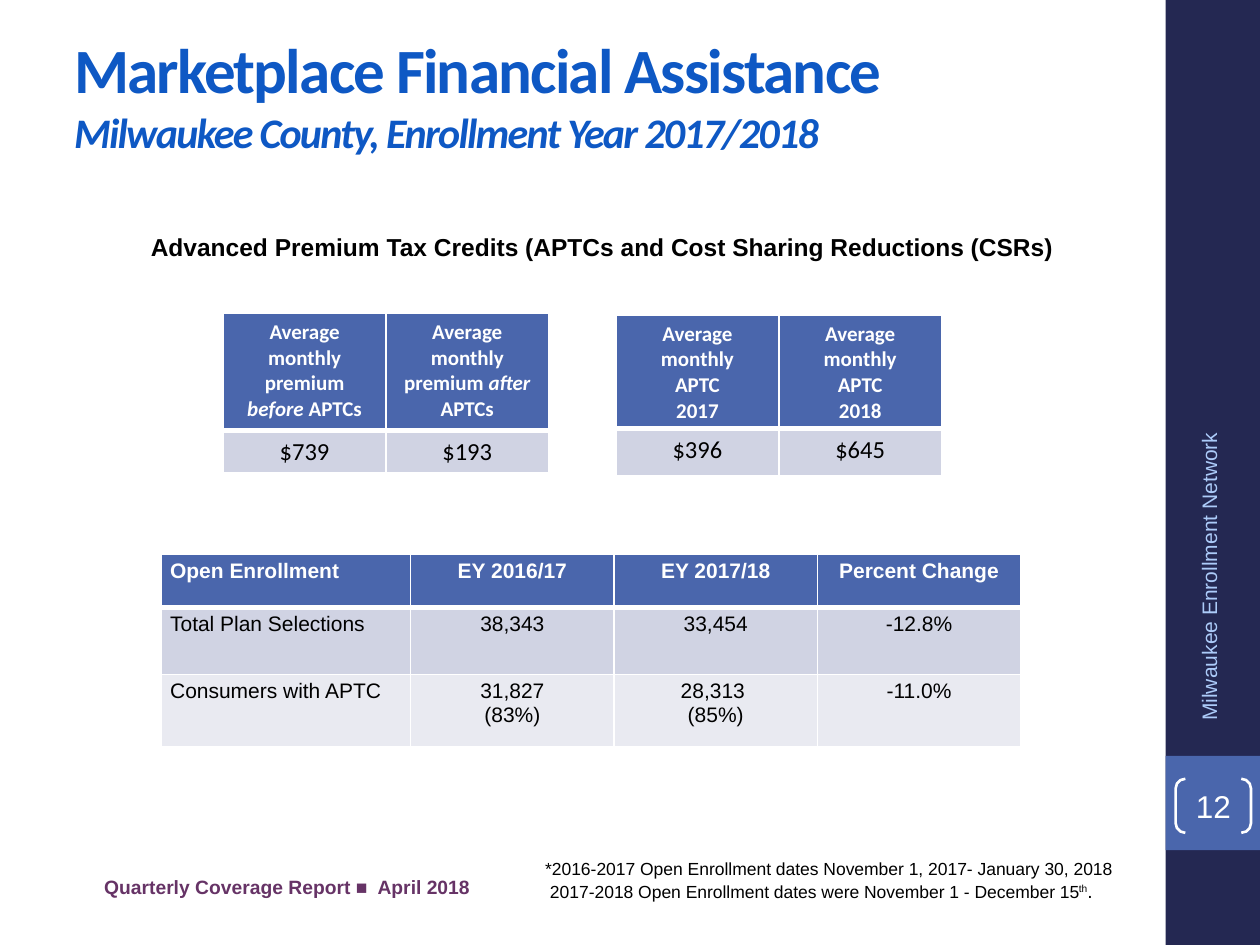
from lxml.etree import SubElement
from pptx import Presentation
from pptx.dml.color import RGBColor
from pptx.enum.shapes import MSO_SHAPE as SHAPE
from pptx.enum.text import MSO_ANCHOR as ANCHOR, MSO_AUTO_SIZE as AUTO, PP_ALIGN as ALIGN
from pptx.oxml.ns import qn
from pptx.util import Cm, Pt

# Content: a paragraph is a list of (text, format changes) runs
ITALIC = dict(italic=True)
TITLE = [("Marketplace Financial Assistance", dict(size=36)),
         ("Milwaukee County, Enrollment Year 2017/2018", dict(size=24, italic=True))]
HEADING = "Advanced Premium Tax Credits (APTCs and Cost Sharing Reductions (CSRs)"
NETWORK = "Milwaukee Enrollment Network"
REPORT = "Quarterly Coverage Report ■  April 2018"
PAGE = "12"
NOTES = [[("*2016-2017 Open Enrollment dates November 1, 2017- January 30, 2018", {})],
         [(" 2017-2018 Open Enrollment dates were November 1 - December 15", {}),
          ("th", dict(baseline=30)), (".", dict(size=11))]]

PREMIUMS = [
    [[[("Average monthly premium ", {}), (when, ITALIC), (" APTCs", {})]]
     for when in ("before", "after")],
    ["$739", "$193"],
]
CREDITS = [
    ["Average monthly\nAPTC\n2017", "Average monthly\nAPTC\n2018"],
    ["$396", "$645"],
]
ENROLLMENT = [
    ["Open Enrollment", "EY 2016/17", "EY 2017/18", "Percent Change"],
    ["Total Plan Selections", "38,343", "33,454", "-12.8%"],
    ["Consumers with APTC", "31,827\n(83%)", "28,313 \n(85%)", "-11.0%"],
]

# Each table: rows, left, top, column widths, row heights, body size, font, first column align
TABLES = [
    (PREMIUMS, 4.5, 6.32, [3.28] * 2, [2.36, 0.79], 14, "Calibri", ALIGN.CENTER),
    (CREDITS, 12.42, 6.35, [3.28] * 2, [2.25, 0.95], 14, "Calibri", ALIGN.CENTER),
    (ENROLLMENT, 3.25, 11.18, [5.03] + [4.1] * 3, [1.07, 1.35, 1.45], 12, "Arial", ALIGN.LEFT),
]

NAVY, BLUE, WHITE, BLACK = "242852", "4A66AC", "FFFFFF", "000000"
BANDS = ["D0D3E3", "E9EAF1"]


def rgb(value):
    return RGBColor.from_string(value)


def style(r, color, **fmt):
    """Apply a dict of font values to a run."""
    r.font.color.rgb = rgb(color)
    for name, value in fmt.items():
        if name == "baseline":
            r.font._element.set("baseline", str(value * 1000))
        else:
            setattr(r.font, name, Pt(value) if name == "size" else value)


def write(tf, content, align=ALIGN.LEFT, **fmt):
    """Fill a text frame from a string or from lists of runs."""
    if isinstance(content, str):
        content = [[(line, {})] for line in content.split("\n")]
    for i, runs in enumerate(content):
        p = tf.add_paragraph() if i else tf.paragraphs[0]
        p.alignment = align
        for text, changes in runs:
            r = p.add_run()
            r.text = text
            style(r, **{**fmt, **changes})


def add_text(s, box, content, anchor=ANCHOR.TOP, **fmt):
    tb = s.shapes.add_textbox(*map(Cm, box))
    tb.text_frame.word_wrap = True
    tb.text_frame.vertical_anchor = anchor
    write(tb.text_frame, content, **fmt)
    return tb


def add_shape(s, kind, box, fill=None):
    sp = s.shapes.add_shape(kind, *map(Cm, box))
    sp.shadow.inherit = False
    if fill:
        sp.fill.solid()
        sp.fill.fore_color.rgb = rgb(fill)
    else:
        sp.fill.background()
    sp.line.fill.background()
    return sp


def set_borders(cell, **widths):
    tc_pr = cell._tc.get_or_add_tcPr()
    for side, width in widths.items():
        ln = SubElement(tc_pr, qn("a:ln" + side), w=str(Pt(width)))
        SubElement(SubElement(ln, qn("a:solidFill")), qn("a:srgbClr"), val=WHITE)


def add_table(s, rows, left, top, widths, heights, size, font, first_align):
    table = s.shapes.add_table(len(rows), len(widths), Cm(left), Cm(top),
                               Cm(sum(widths)), Cm(sum(heights))).table
    for col, width in zip(table.columns, widths):
        col.width = Cm(width)
    for i, (row, height) in enumerate(zip(rows, heights)):
        table.rows[i].height = Cm(height)
        head = i == 0
        for j, content in enumerate(row):
            cell = table.cell(i, j)
            if font == "Arial":
                cell.margin_left = cell.margin_right = Cm(0.18)
                cell.margin_top = cell.margin_bottom = Cm(0.1)
            set_borders(cell, L=1, R=1, T=3 if i == 1 else 1, B=3 if head else 1)
            cell.fill.solid()
            cell.fill.fore_color.rgb = rgb(BLUE if head else BANDS[(i - 1) % 2])
            write(cell.text_frame, content, first_align if j == 0 else ALIGN.CENTER,
                  name=font, size=12 if head else size, bold=head,
                  color=WHITE if head else BLACK)


def main():
    prs = Presentation()
    prs.slide_width, prs.slide_height = Cm(25.4), Cm(19.05)
    s = prs.slides.add_slide(prs.slide_layouts[5])

    # Sidebar with network name and page number
    add_shape(s, SHAPE.RECTANGLE, (23.5, 0, 1.9, 19.05), NAVY)
    add_shape(s, SHAPE.RECTANGLE, (23.5, 15.24, 1.9, 1.9), BLUE)
    side = add_text(s, (21.08, 11.25, 6.58, 1.02), NETWORK, ANCHOR.MIDDLE, align=ALIGN.RIGHT,
                    name="Arial", size=12, color="ACCBF9")
    side.rotation = 270
    page = add_shape(s, SHAPE.DOUBLE_BRACKET, (23.7, 15.7, 1.52, 1.09))
    page.adjustments[0] = 0.18
    page.line.color.rgb = rgb(WHITE)
    page.line.width = Pt(1.5)
    tf = page.text_frame
    tf.margin_left = tf.margin_right = tf.margin_top = tf.margin_bottom = 0
    tf.vertical_anchor = ANCHOR.MIDDLE
    write(tf, PAGE, ALIGN.CENTER, name="Arial", size=18, color=WHITE)

    # Title: two lines, tightly spaced letters
    title = s.shapes.title
    title.left, title.top, title.width, title.height = map(Cm, (1.24, 0.58, 20.52, 2.62))
    tf = title.text_frame
    tf.auto_size = AUTO.NONE
    tf.vertical_anchor = ANCHOR.MIDDLE
    p = tf.paragraphs[0]
    p.alignment = ALIGN.LEFT
    for i, (text, fmt) in enumerate(TITLE):
        if i:
            p.add_line_break()
        r = p.add_run()
        r.text = text
        style(r, "0E58C4", name="Calibri", bold=True, **fmt)
        r.font._element.set("spc", "-100")

    # Heading and tables
    add_text(s, (2.79, 4.55, 19.25, 0.86), HEADING, name="Arial", size=14, bold=True, color=BLACK)
    for table in TABLES:
        add_table(s, *table)

    # Footer
    add_text(s, (10.74, 17.17, 12.22, 1.14), NOTES, name="Arial", size=10, color=BLACK)
    add_text(s, (1.85, 17.37, 10.57, 1.02), REPORT, ANCHOR.MIDDLE,
             name="Arial", size=11, bold=True, color="663366")

    prs.save("out.pptx")


if __name__ == "__main__":
    main()
